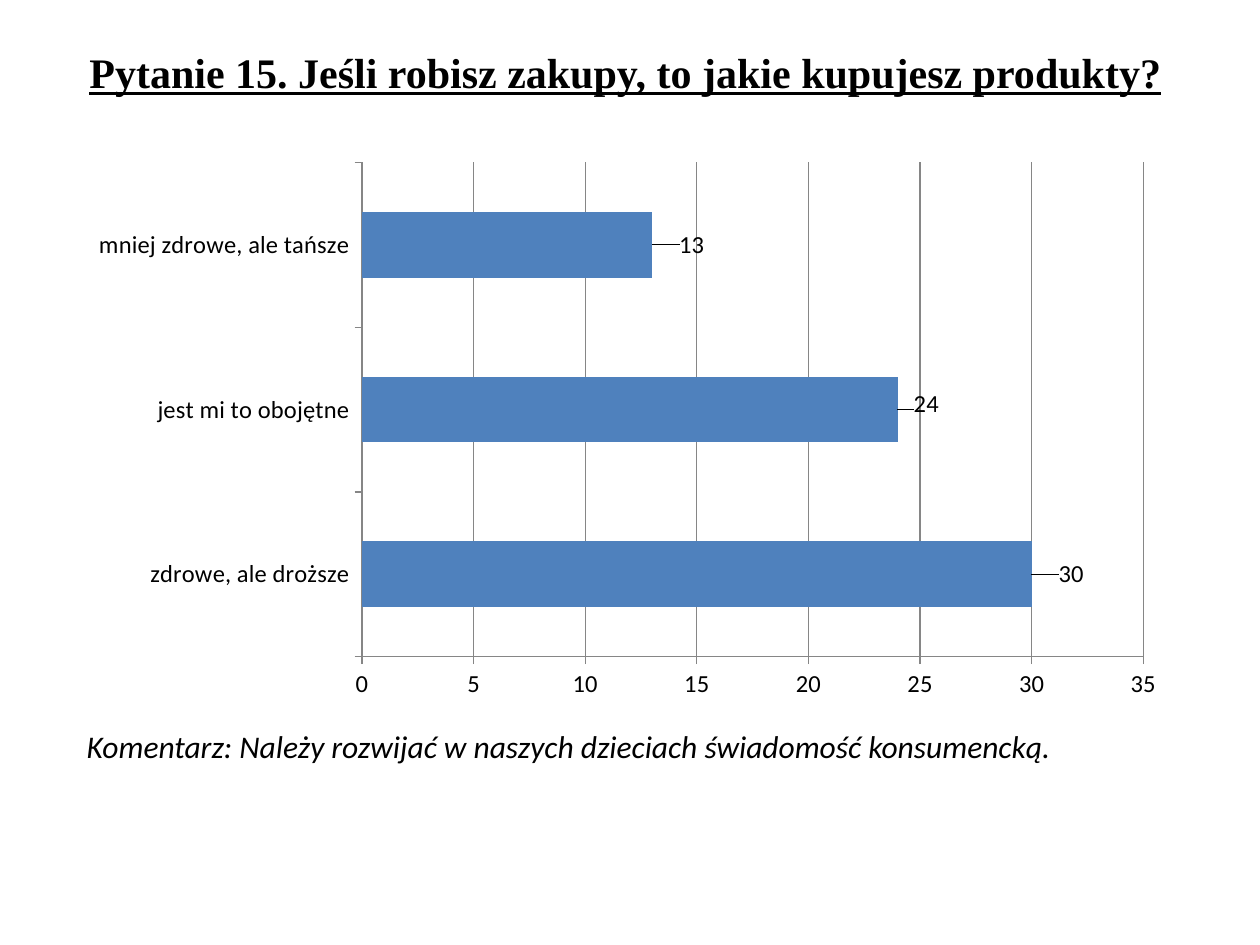
from lxml import etree
from pptx import Presentation
from pptx.chart.data import CategoryChartData
from pptx.dml.color import RGBColor
from pptx.enum.chart import XL_CHART_TYPE, XL_LABEL_POSITION, XL_TICK_MARK
from pptx.enum.text import MSO_ANCHOR, PP_ALIGN
from pptx.oxml.ns import qn
from pptx.util import Inches, Pt

BAR_CLUSTERED = XL_CHART_TYPE.BAR_CLUSTERED
OUTSIDE_END = XL_LABEL_POSITION.OUTSIDE_END
TICK_OUTSIDE = XL_TICK_MARK.OUTSIDE
TOP = MSO_ANCHOR.TOP
LEFT = PP_ALIGN.LEFT

BLACK, GRAY, BLUE = "000000", "868686", "4F81BD"
ANSWERS = {
    "zdrowe, ale droższe": 30,
    "jest mi to obojętne": 24,
    "mniej zdrowe, ale tańsze": 13,
}
LABEL_SHIFTS = [(0.02, 0), (0.01, -0.01), (0.02, 0)]


def color(hex_string):
    return RGBColor.from_string(hex_string)


def style_font(font, size, name="Calibri", hex_string=BLACK, **flags):
    font.size = Pt(size)
    font.name = name
    font.color.rgb = color(hex_string)
    for flag, value in flags.items():
        setattr(font, flag, value)


def write_text(frame, text, **style):
    frame.word_wrap = True
    frame.vertical_anchor = TOP
    paragraph = frame.paragraphs[0]
    paragraph.alignment = LEFT
    run = paragraph.add_run()
    run.text = text
    style_font(run.font, **style)


def place_question(slide, box):
    question = slide.shapes.title
    question.left, question.top, question.width, question.height = map(Inches, box)
    write_text(question.text_frame,
               "Pytanie 15. Jeśli robisz zakupy, to jakie kupujesz produkty?",
               size=24, name="Times New Roman", bold=True, underline=True)


def style_axis(axis):
    axis.major_tick_mark = TICK_OUTSIDE
    axis.format.line.color.rgb = color(GRAY)
    axis.format.line.width = Pt(0.75)
    style_font(axis.tick_labels.font, 14)


def shift_label(label_element, x, y):
    layout = etree.Element(qn("c:layout"))
    manual = etree.SubElement(layout, qn("c:manualLayout"))
    for tag, value in (("c:x", x), ("c:y", y)):
        etree.SubElement(manual, qn(tag)).set("val", str(value))
    label_element.insert(1, layout)


def place_answers(slide, box):
    answers = CategoryChartData()
    answers.categories = list(ANSWERS)
    answers.add_series("Series 1", list(ANSWERS.values()))
    chart = slide.shapes.add_chart(BAR_CLUSTERED, *map(Inches, box), answers).chart
    style_font(chart.font, 18)
    chart.has_legend = False
    chart.has_title = False

    style_axis(chart.category_axis)
    counts_axis = chart.value_axis
    style_axis(counts_axis)
    counts_axis.minimum_scale, counts_axis.maximum_scale = 0, 35
    counts_axis.major_unit = 5
    counts_axis.has_major_gridlines = True
    gridline = counts_axis.major_gridlines.format.line
    gridline.color.rgb = color(GRAY)
    gridline.width = Pt(0.75)

    plot = chart.plots[0]
    plot.gap_width = 150
    plot.vary_by_categories = False
    bars = plot.series[0]
    bars.format.fill.solid()
    bars.format.fill.fore_color.rgb = color(BLUE)

    labels = bars.data_labels
    labels.show_value = True
    labels.position = OUTSIDE_END
    style_font(labels.font, 14)
    for index in range(len(ANSWERS)):
        label = bars.points[index].data_label
        style_font(label.font, 14)
        label.position = OUTSIDE_END
    label_elements = labels._element.findall(qn("c:dLbl"))
    for label_element, shift in zip(label_elements, LABEL_SHIFTS):
        shift_label(label_element, *shift)


def place_comment(slide, box):
    comment = slide.shapes.add_textbox(*map(Inches, box))
    write_text(comment.text_frame,
               "Komentarz: Należy rozwijać w naszych dzieciach świadomość konsumencką.",
               size=18, italic=True)


def main():
    presentation = Presentation()
    presentation.slide_width, presentation.slide_height = Inches(10), Inches(7.5)
    slide = presentation.slides.add_slide(presentation.slide_layouts[5])
    place_question(slide, (0.61, 0.32, 8.9, 0.5))
    place_answers(slide, (0.61, 1.2, 8.74, 4.44))
    place_comment(slide, (0.59, 5.72, 8.9, 0.4))
    presentation.save("out.pptx")


if __name__ == "__main__":
    main()
